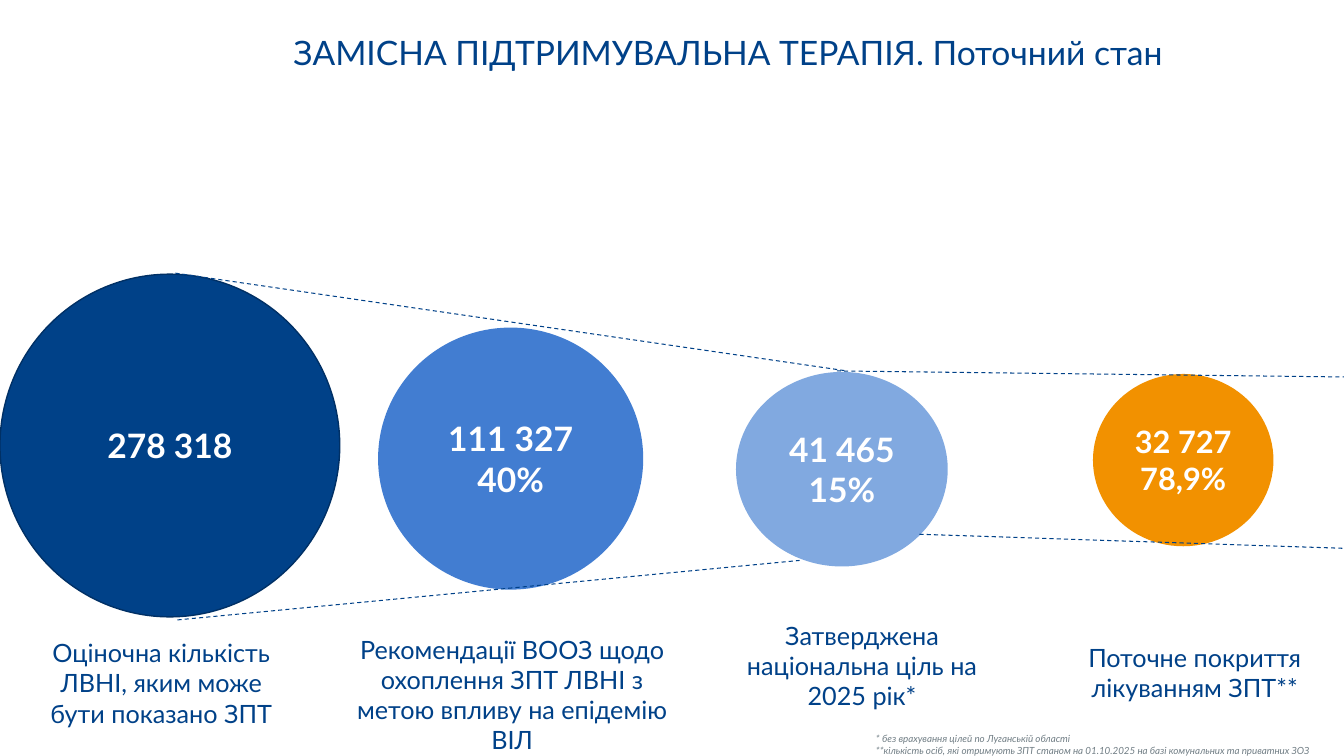
from lxml.etree import SubElement
from pptx import Presentation
from pptx.dml.color import RGBColor
from pptx.enum.dml import MSO_LINE
from pptx.enum.shapes import MSO_CONNECTOR, MSO_SHAPE
from pptx.enum.text import MSO_ANCHOR, PP_ALIGN
from pptx.oxml.ns import qn
from pptx.util import Inches, Pt

NAVY = RGBColor(0x00, 0x41, 0x88)
DARK_NAVY = RGBColor(0x00, 0x30, 0x65)
BLUE = RGBColor(0x42, 0x7D, 0xD1)
LIGHT_BLUE = RGBColor(0x81, 0xA9, 0xE0)
ORANGE = RGBColor(0xF2, 0x91, 0x00)
GRAY = RGBColor(0x71, 0x7E, 0x85)
WHITE = RGBColor(0xFF, 0xFF, 0xFF)

TITLE = "ЗАМІСНА ПІДТРИМУВАЛЬНА ТЕРАПІЯ. Поточний стан"
CIRCLES = [
    ("278 318", (0, 2.72, 3.37, 3.4), NAVY, DARK_NAVY, 24),
    ("111 327\v40%", (3.75, 3.25, 2.63, 2.6), BLUE, None, 24),
    ("32 727\v78,9%", (10.84, 3.71, 1.79, 1.71), ORANGE, None, 22),
    ("41 465\v15%", (7.3, 3.69, 2.1, 1.93), LIGHT_BLUE, None, 24),
]
GUIDES = [
    (1.76, 6.15, 7.93, 5.56),
    (1.74, 2.71, 8.4, 3.68),
    (8.3, 3.68, 13.33, 3.74),
    (9.12, 5.3, 13.33, 5.44),
]
LABELS = [
    ("Оціночна кількість ЛВНІ, яким може бути показано ЗПТ", (0.23, 6.19, 2.74, 1.17)),
    ("Рекомендації ВООЗ щодо охоплення ЗПТ ЛВНІ з метою впливу на епідемію ВІЛ",
     (3.37, 6.1, 3.42, 1.58)),
    ("Поточне покриття лікуванням ЗПТ**", (10.48, 5.88, 2.74, 1.58)),
    ("Затверджена національна ціль на 2025 рік*", (7.18, 5.81, 2.74, 1.58)),
]
FOOTNOTES = (
    "* без врахування цілей по Луганській області\n"
    "**кількість осіб, які отримують ЗПТ станом на 01.10.2025 на базі комунальних та приватних ЗОЗ"
)


def write(sp, text, size, color, align=PP_ALIGN.CENTER, bold=False, italic=False,
          anchor=MSO_ANCHOR.MIDDLE):
    """Fill a shape with uniformly formatted text."""
    tf = sp.text_frame
    tf.text = text
    tf.word_wrap = True
    tf.vertical_anchor = anchor
    for p in tf.paragraphs:
        p.alignment = align
        p.font.name = "Lato"
        p.font.size = Pt(size)
        p.font.bold = bold
        p.font.italic = italic
        p.font.color.rgb = color


def add_circle(s, text, box, fill, outline, size):
    """Add a circle holding a figure."""
    sp = s.shapes.add_shape(MSO_SHAPE.OVAL, *map(Inches, box))
    sp.shadow.inherit = False
    sp.fill.solid()
    sp.fill.fore_color.rgb = fill
    if outline:
        sp.line.color.rgb = outline
        sp.line.width = Pt(1)
    else:
        sp.line.fill.background()
    write(sp, text, size, WHITE, bold=True)


def add_guide(s, ends):
    """Add a dashed line between two points."""
    line = s.shapes.add_connector(MSO_CONNECTOR.STRAIGHT, *map(Inches, ends))
    line.line.color.rgb = NAVY
    line.line.width = Pt(0.75)
    line.line.dash_style = MSO_LINE.DASH
    SubElement(line._element.spPr, qn("a:effectLst"))


def main():
    """Build the slide on substitution therapy coverage."""
    prs = Presentation()
    prs.slide_width, prs.slide_height = Inches(13.33), Inches(7.5)
    s = prs.slides.add_slide(prs.slide_layouts[5])

    title = s.shapes.title
    title.left, title.top, title.width, title.height = map(Inches, (2.81, 0.31, 10.3, 0.69))
    write(title, TITLE, 24, NAVY, PP_ALIGN.LEFT, anchor=MSO_ANCHOR.TOP)
    title.text_frame.paragraphs[0].line_spacing = 0.9

    for circle in CIRCLES:
        add_circle(s, *circle)
    for ends in GUIDES:
        add_guide(s, ends)
    for text, box in LABELS:
        write(s.shapes.add_textbox(*map(Inches, box)), text, 18, NAVY)
    notes = s.shapes.add_textbox(*map(Inches, (8.59, 7.04, 4.7, 0.69)))
    write(notes, FOOTNOTES, 7, GRAY, PP_ALIGN.LEFT, italic=True)

    prs.save("out.pptx")


if __name__ == "__main__":
    main()
